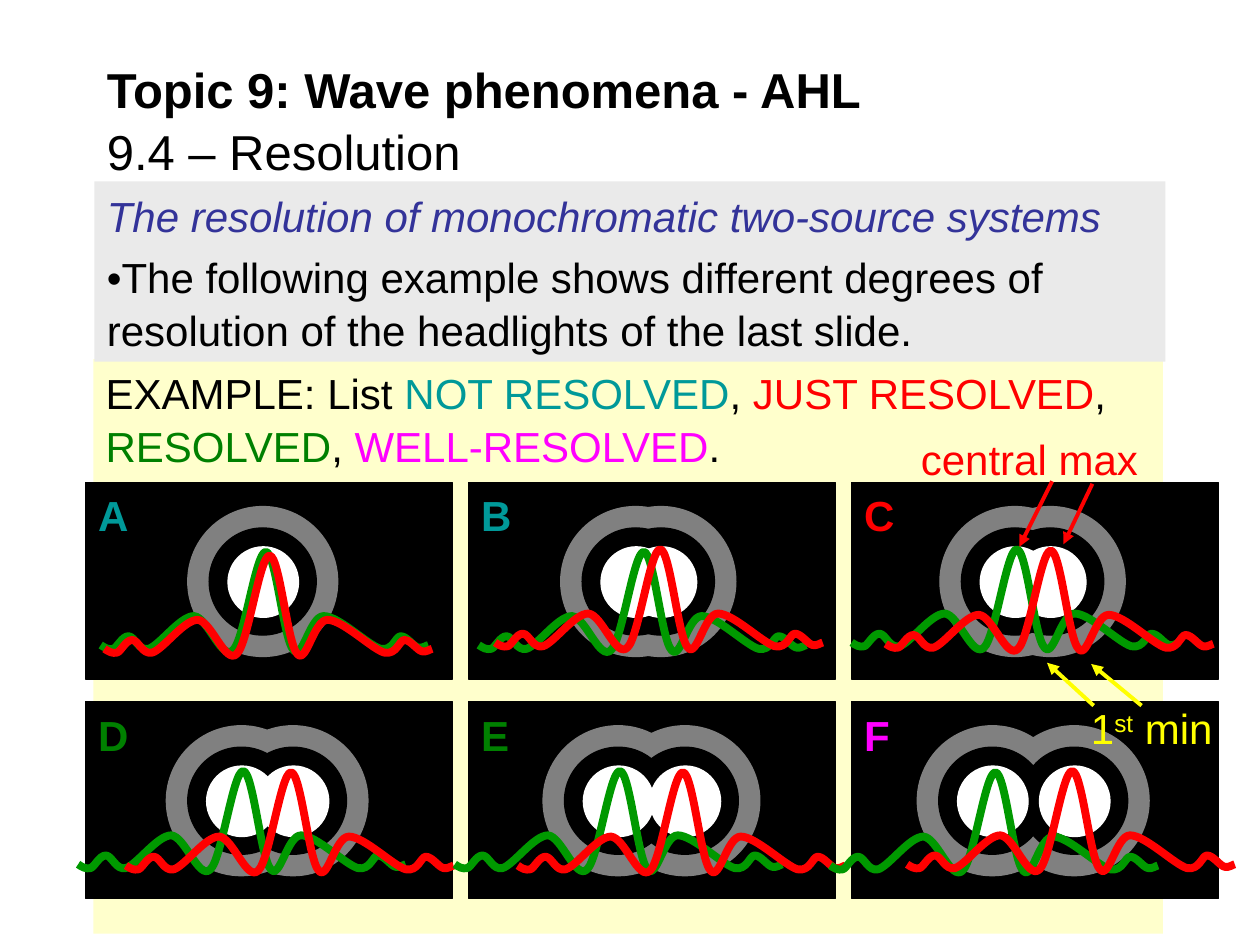
"""Build a slide on resolving two light sources, with six diffraction panels."""
from dataclasses import dataclass

import lxml.etree
import pptx
import pptx.dml.color
import pptx.enum.shapes
import pptx.enum.text
import pptx.oxml.ns
import pptx.util

Inches = pptx.util.Inches
Box = tuple[float, float, float, float]
Point = tuple[float, float]


@dataclass(frozen=True)
class Theme:
    font: str = "Arial"
    title_size: int = 28
    body_size: int = 24
    line_spacing: float = 1.05
    black: str = "000000"
    white: str = "FFFFFF"
    ring: str = "808080"
    intro: str = "EAEAEA"
    example: str = "FFFFCC"
    heading: str = "333399"
    teal: str = "009999"
    red: str = "FF0000"
    green: str = "008000"
    wave_green: str = "009900"
    magenta: str = "FF00FF"
    yellow: str = "FFFF00"


THEME = Theme()


@dataclass(frozen=True)
class Run:
    text: str
    color: str = THEME.black
    superscript: bool = False


@dataclass(frozen=True)
class Paragraph:
    runs: tuple[Run, ...]
    size: int = THEME.body_size
    bold: bool = False
    italic: bool = False
    space_before: float = 0


@dataclass(frozen=True)
class Panel:
    letter: str
    color: str
    column: int
    row: int
    sources: tuple[float, ...]
    waves: tuple[Point, Point]

    @property
    def left(self) -> float:
        return 0.68 + 3.04 * self.column

    @property
    def top(self) -> float:
        return 3.83 + 1.74 * self.row


@dataclass(frozen=True)
class Arrow:
    start: Point
    end: Point
    color: str


PANELS = (
    Panel("A", THEME.teal, 0, 0, (0.81,), ((0.12, 0.55), (0.15, 0.58))),
    Panel("B", THEME.teal, 1, 0, (0.73, 0.93), ((0.08, 0.55), (0.21, 0.53))),
    Panel("C", THEME.red, 2, 0, (0.7, 0.98), ((0, 0.53), (0.27, 0.54))),
    Panel("D", THEME.green, 0, 1, (0.64, 1.05), ((-0.06, 0.55), (0.32, 0.56))),
    Panel("E", THEME.green, 1, 1, (0.59, 1.12), ((-0.11, 0.55), (0.39, 0.56))),
    Panel("F", THEME.magenta, 2, 1, (0.52, 1.17), ((-0.17, 0.56), (0.44, 0.55))),
)
ARROWS = (
    Arrow((8.35, 3.82), (8.09, 4.34), THEME.red),
    Arrow((8.67, 3.84), (8.44, 4.32), THEME.red),
    Arrow((8.68, 5.6), (8.31, 5.26), THEME.yellow),
    Arrow((9.06, 5.6), (8.66, 5.27), THEME.yellow),
)
DISCS = ((0, 1.19, THEME.ring), (0.17, 0.85, THEME.black), (0.32, 0.56, THEME.white))
WAVE = (
    (0, 0.74), (0.03, 0.76), (0.06, 0.78), (0.1, 0.77),
    (0.13, 0.76), (0.17, 0.67), (0.22, 0.67), (0.27, 0.67), (0.3, 0.79), (0.38, 0.77),
    (0.47, 0.74), (0.63, 0.51), (0.74, 0.51), (0.85, 0.52), (0.96, 0.87), (1.05, 0.78),
    (1.14, 0.7), (1.23, 0), (1.31, 0), (1.39, 0), (1.45, 0.7), (1.53, 0.78),
    (1.6, 0.87), (1.66, 0.51), (1.77, 0.51), (1.89, 0.51), (2.12, 0.74), (2.22, 0.77),
    (2.32, 0.79), (2.34, 0.67), (2.38, 0.67), (2.43, 0.67), (2.48, 0.75), (2.52, 0.76),
    (2.55, 0.77), (2.59, 0.74), (2.6, 0.74),
)


def rgb(color: str) -> pptx.dml.color.RGBColor:
    return pptx.dml.color.RGBColor.from_string(color)


def set_line(line, color: str, width: float) -> None:
    line.color.rgb = rgb(color)
    line.width = pptx.util.Pt(width)


def add_filled(slide, kind, box: Box, color: str, outlined: bool = True):
    shape = slide.shapes.add_shape(kind, *map(Inches, box))
    shape.shadow.inherit = False
    shape.fill.solid()
    shape.fill.fore_color.rgb = rgb(color)
    if outlined:
        set_line(shape.line, color, 0.75)
    else:
        shape.line.fill.background()
    return shape


def write(shape, paragraphs: tuple[Paragraph, ...],
          anchor=pptx.enum.text.MSO_ANCHOR.TOP) -> None:
    frame = shape.text_frame
    frame.word_wrap = True
    frame.vertical_anchor = anchor
    for index, content in enumerate(paragraphs):
        paragraph = frame.add_paragraph() if index else frame.paragraphs[0]
        paragraph.alignment = pptx.enum.text.PP_ALIGN.LEFT
        paragraph.line_spacing = THEME.line_spacing
        paragraph.space_before = pptx.util.Pt(content.space_before)
        paragraph.font.name = THEME.font
        paragraph.font.size = pptx.util.Pt(content.size)
        paragraph.font.bold = content.bold
        paragraph.font.italic = content.italic
        for piece in content.runs:
            run = paragraph.add_run()
            run.text = piece.text
            run.font.name = THEME.font
            run.font.size = pptx.util.Pt(content.size)
            run.font.bold = content.bold
            run.font.italic = content.italic
            run.font.color.rgb = rgb(piece.color)
            if piece.superscript:
                run.font._element.set("baseline", "30000")


def add_text(slide, box: Box, *paragraphs: Paragraph, **options) -> None:
    write(slide.shapes.add_textbox(*map(Inches, box)), paragraphs, **options)


def add_panel(slide, panel: Panel) -> None:
    kinds = pptx.enum.shapes.MSO_SHAPE
    add_filled(slide, kinds.RECTANGLE, (panel.left, panel.top, 2.91, 1.56), THEME.black)
    for inset, size, color in DISCS:
        for source in panel.sources:
            box = (panel.left + source + inset, panel.top + 0.19 + inset, size, size)
            add_filled(slide, kinds.OVAL, box, color)


def add_wave(slide, left: float, top: float, color: str) -> None:
    points = [(Inches(left + x), Inches(top + y)) for x, y in WAVE]
    builder = slide.shapes.build_freeform(*points[0])
    builder.add_line_segments(points[1:], close=False)
    shape = builder.convert_to_shape()
    qualified = pptx.oxml.ns.qn
    segments = list(shape._element.iter(qualified("a:lnTo")))
    for start in range(0, len(segments), 3):
        curve = lxml.etree.Element(qualified("a:cubicBezTo"))
        segments[start].addprevious(curve)
        for segment in segments[start:start + 3]:
            curve.append(segment[0])
            segment.getparent().remove(segment)
    shape.shadow.inherit = False
    shape.fill.background()
    set_line(shape.line, color, 4.5)


def add_arrow(slide, arrow: Arrow) -> None:
    connector = slide.shapes.add_connector(
        pptx.enum.shapes.MSO_CONNECTOR.STRAIGHT, *map(Inches, arrow.start + arrow.end))
    set_line(connector.line, arrow.color, 2.25)
    qualified = pptx.oxml.ns.qn
    outline = connector.line._get_or_add_ln()
    lxml.etree.SubElement(outline, qualified("a:tailEnd"), type="triangle")
    lxml.etree.SubElement(connector._element.spPr, qualified("a:effectLst"))


def main() -> None:
    presentation = pptx.Presentation()
    presentation.slide_width, presentation.slide_height = Inches(10), Inches(7.5)
    slide = presentation.slides.add_slide(presentation.slide_layouts[6])
    rectangle = pptx.enum.shapes.MSO_SHAPE.RECTANGLE
    middle, top = pptx.enum.text.MSO_ANCHOR.MIDDLE, pptx.enum.text.MSO_ANCHOR.TOP
    example = add_filled(slide, rectangle, (0.74, 2.85, 8.49, 4.56), THEME.example, False)
    write(example, (Paragraph((
        Run("EXAMPLE: List "), Run("NOT RESOLVED", THEME.teal), Run(", "),
        Run("JUST RESOLVED", THEME.red), Run(", "), Run("RESOLVED", THEME.green),
        Run(", "), Run("WELL-RESOLVED", THEME.magenta), Run("."))),), top)
    intro = add_filled(slide, rectangle, (0.75, 1.44, 8.5, 1.43), THEME.intro, False)
    heading = "The resolution of monochromatic two-source systems"
    statement = ("•The following example shows different degrees of resolution "
                 "of the headlights of the last slide.")
    write(intro, (Paragraph((Run(heading, THEME.heading),), italic=True),
                  Paragraph((Run(statement),), space_before=4.8)), top)
    for panel in PANELS:
        add_panel(slide, panel)
    for panel in PANELS:
        for (x, y), color in zip(panel.waves, (THEME.wave_green, THEME.red)):
            add_wave(slide, panel.left + x, panel.top + y, color)
    for panel in PANELS:
        add_text(slide, (panel.left, panel.top - 0.01, 0.45, 0.5),
                 Paragraph((Run(panel.letter, panel.color),), bold=True))
    add_text(slide, (7.21, 3.37, 2.39, 0.51), Paragraph((Run("central max", THEME.red),)))
    add_text(slide, (8.56, 5.51, 1.44, 0.51), Paragraph((
        Run("1", THEME.yellow), Run("st", THEME.yellow, True), Run(" min", THEME.yellow))))
    for arrow in ARROWS:
        add_arrow(slide, arrow)
    add_text(slide, (0.75, 0.45, 8.5, 0.98),
             Paragraph((Run("Topic 9: Wave phenomena - AHL"),), THEME.title_size, True),
             Paragraph((Run("9.4 – Resolution"),), THEME.title_size), anchor=middle)
    presentation.save("out.pptx")


if __name__ == "__main__":
    main()
